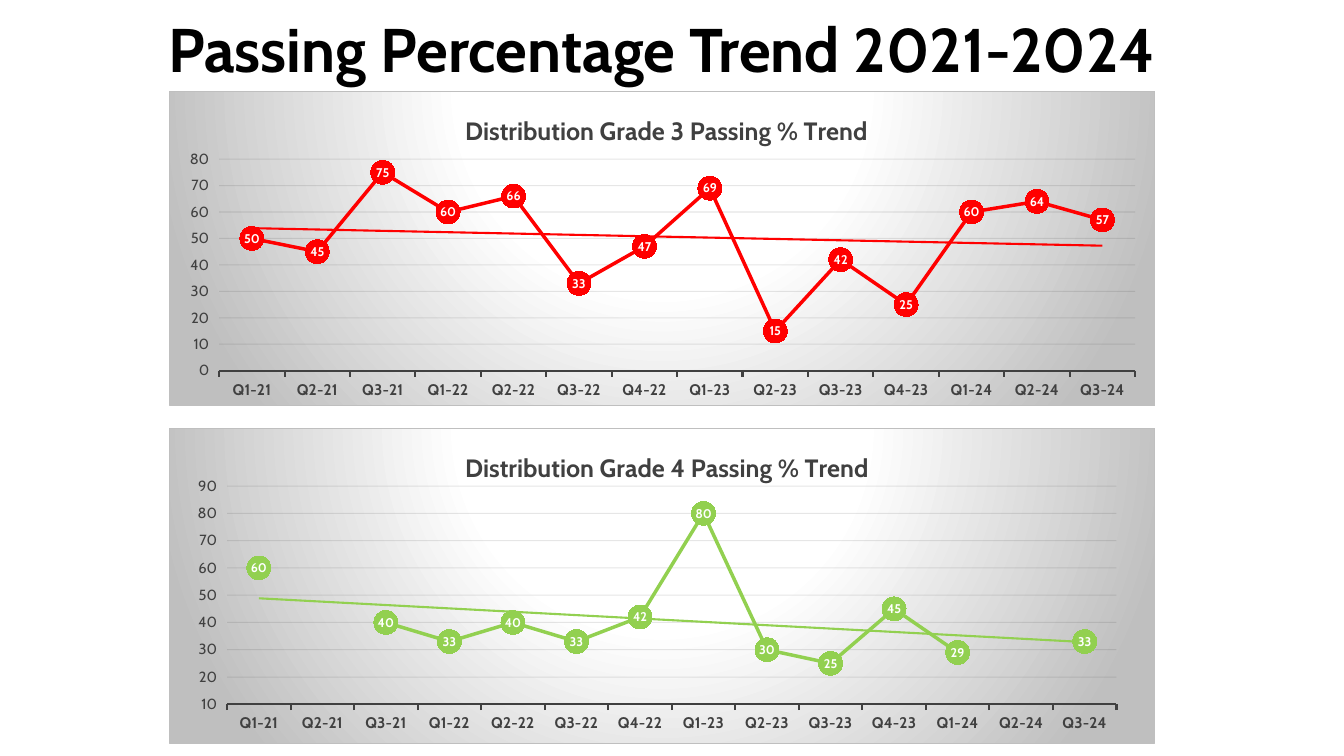
"""Slide with two line charts of quarterly passing percentages, each with a trend line."""
from lxml import etree
from pptx import Presentation
from pptx import util as u
from pptx.chart.data import CategoryChartData
from pptx.dml.color import RGBColor
from pptx.enum import chart as ch, text
from pptx.oxml import parse_xml
from pptx.oxml.ns import nsdecls, qn

COLORS = {"black": "000000", "white": "FFFFFF", "axis": "404040", "grid": "0D0D0D",
          "edge": "BFBFBF", "grade3": "FF0000", "grade4": "92D050"}
FONT = "Cabin"
WIDTH, HEIGHT = u.Inches(13.33), u.Inches(7.5)
QUARTERS = [f"Q{q}-{year}" for year, first, last in ((21, 1, 3), (22, 1, 4), (23, 1, 4), (24, 1, 3))
            for q in range(first, last + 1)]
GRADES = [
    (3, [50, 45, 75, 60, 66, 33, 47, 69, 15, 42, 25, 60, 64, 57],
     0, 80, (0.05, 0.216, 0.93, 0.673)),
    (4, [60, None, 40, 33, 40, 33, 42, 80, 30, 25, 45, 29, None, 33],
     10, 90, (0.058, 0.182, 0.903, 0.694)),
]


def style_font(font, size, color, bold=False):
    font.name, font.size, font.bold = FONT, u.Pt(size), bold
    font.color.rgb = RGBColor.from_string(COLORS[color])


def place(parent, index, fractions, inner=False):
    for old in parent.findall(qn("c:layout")):
        parent.remove(old)
    layout = etree.Element(qn("c:layout"))
    manual = etree.SubElement(layout, qn("c:manualLayout"))
    settings = [("layoutTarget", "inner")] if inner else []
    settings += [("xMode", "edge"), ("yMode", "edge"), *zip("xywh", fractions)]
    for tag, value in settings:
        etree.SubElement(manual, qn(f"c:{tag}")).set("val", str(value))
    parent.insert(index, layout)


prs = Presentation()
prs.slide_width, prs.slide_height = WIDTH, HEIGHT
slide = prs.slides.add_slide(prs.slide_layouts[6])

heading = slide.shapes.add_textbox(u.Inches(0.7), u.Inches(-0.2),
                                   WIDTH - 2 * u.Inches(0.8), u.Inches(1.1)).text_frame
heading.word_wrap = True
heading.vertical_anchor = text.MSO_ANCHOR.BOTTOM
headline = heading.paragraphs[0]
headline.text = "Passing Percentage Trend 2021-2024"
headline.alignment = text.PP_ALIGN.CENTER
headline.line_spacing = 0.9
style_font(headline.font, 44, "black", True)

for row, (grade, passing, low, high, plot_box) in enumerate(GRADES):
    color = f"grade{grade}"
    rgb = RGBColor.from_string(COLORS[color])
    data = CategoryChartData()
    data.categories = QUARTERS
    data.add_series("Series 1", passing)
    chart = slide.shapes.add_chart(
        ch.XL_CHART_TYPE.LINE_MARKERS, u.Inches(1.68), u.Inches(0.9 + 3.35 * row),
        u.Inches(9.78), u.Inches(3.13), data).chart
    chart.has_legend = False
    style_font(chart.font, 10, "black")

    chart.has_title = True
    caption = chart.chart_title.text_frame.paragraphs[0]
    caption.text = f"Distribution Grade {grade} Passing % Trend"
    style_font(caption.font, 18, "axis", True)
    place(chart.chart_title._element, 1, (0.295, 0.055))
    place(chart._chartSpace.chart.plotArea, 0, plot_box, inner=True)

    quarters, percent = chart.category_axis, chart.value_axis
    style_font(quarters.tick_labels.font, 11, "axis", True)
    quarters.major_tick_mark = ch.XL_TICK_MARK.OUTSIDE
    quarters.format.line.color.rgb = RGBColor.from_string(COLORS["axis"])
    quarters.format.line.width = u.Pt(1.5)
    style_font(percent.tick_labels.font, 10.5, "axis")
    percent.minimum_scale, percent.maximum_scale, percent.major_unit = low, high, 10
    percent.major_tick_mark = ch.XL_TICK_MARK.OUTSIDE
    percent.format.line.fill.background()
    grid = percent.major_gridlines.format.line
    grid.color.rgb = RGBColor.from_string(COLORS["grid"])
    grid.width = u.Pt(0.75)
    grid_color = grid._ln.find(f".//{qn('a:srgbClr')}")
    etree.SubElement(grid_color, qn("a:alpha")).set("val", "10000")

    chart.plots[0].vary_by_categories = False
    trend = chart.plots[0].series[0]
    trend.smooth = False
    trend.format.line.color.rgb = rgb
    trend.format.line.width = u.Pt(2.5)
    trend.marker.style, trend.marker.size = ch.XL_MARKER_STYLE.CIRCLE, 17
    trend.marker.format.fill.solid()
    trend.marker.format.fill.fore_color.rgb = rgb
    trend.marker.format.line.fill.background()
    labels = trend.data_labels
    labels.show_value = True
    labels.position = ch.XL_LABEL_POSITION.CENTER
    style_font(labels.font, 9, "white", True)

    trend._element.find(qn("c:cat")).addprevious(parse_xml(
        f'<c:trendline {nsdecls("c", "a")}><c:spPr><a:ln w="{u.Pt(1.5)}"><a:solidFill>'
        f'<a:srgbClr val="{COLORS[color]}"/></a:solidFill></a:ln></c:spPr>'
        '<c:trendlineType val="linear"/><c:dispRSqr val="0"/><c:dispEq val="0"/></c:trendline>'))

    stops = "".join(f'<a:gs pos="{share * 1000}"><a:srgbClr val="{COLORS[name]}"/></a:gs>'
                    for share, name in ((0, "white"), (39, "white"), (100, "edge")))
    chart._chartSpace.chart.addnext(parse_xml(
        f'<c:spPr {nsdecls("c", "a")}><a:gradFill><a:gsLst>{stops}</a:gsLst><a:path path="circle">'
        '<a:fillToRect l="50000" t="-80000" r="50000" b="180000"/></a:path></a:gradFill>'
        f'<a:ln w="{u.Pt(0.75)}"><a:solidFill><a:srgbClr val="{COLORS["edge"]}"/></a:solidFill>'
        '</a:ln></c:spPr>'))

prs.save("out.pptx")
